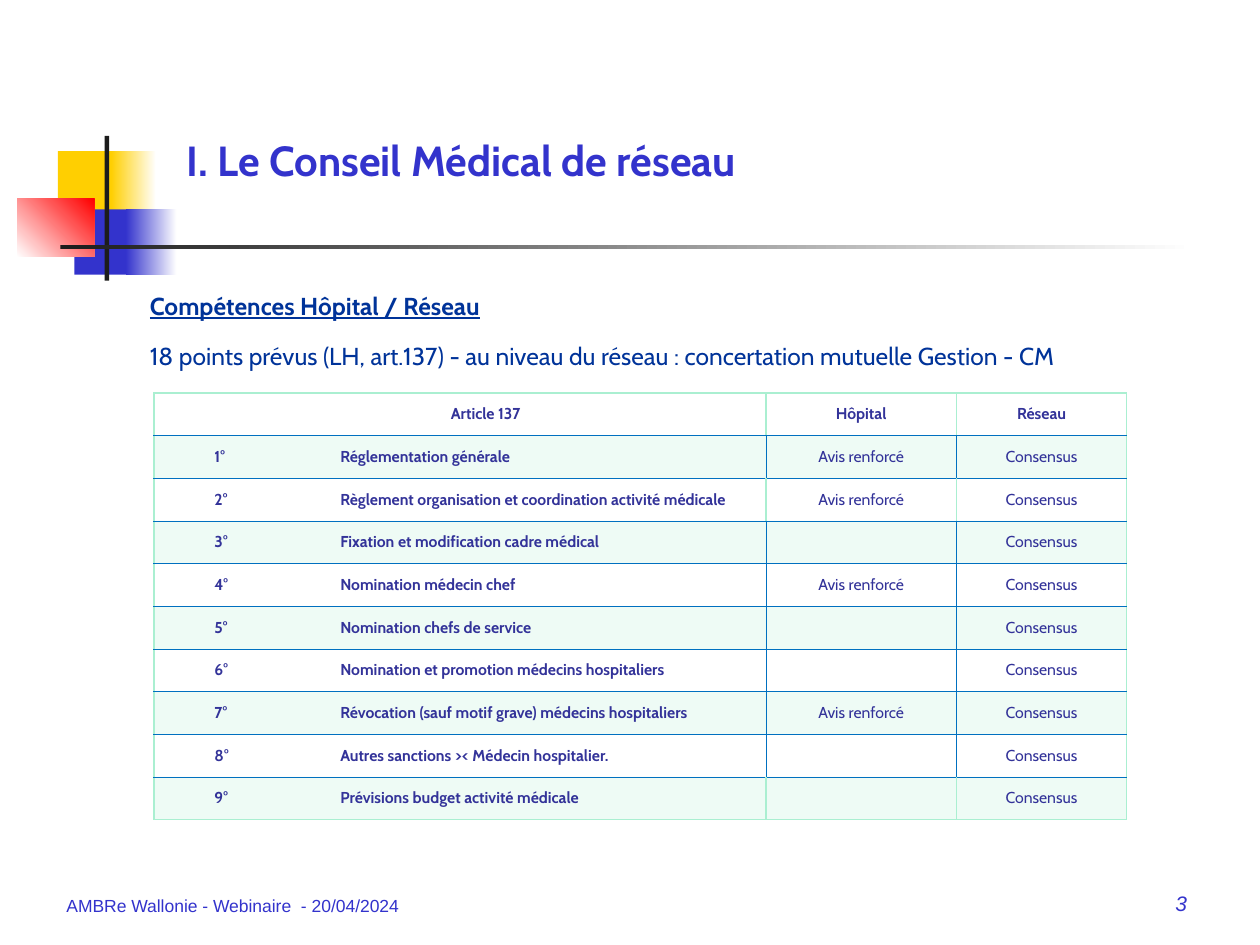
from dataclasses import dataclass
from typing import Optional

import pptx
import pptx.dml.color
import pptx.enum.shapes
import pptx.enum.text
import pptx.oxml
import pptx.oxml.ns
import pptx.util
from pptx.util import Cm

ALIGN = pptx.enum.text.PP_ALIGN
ANCHOR = pptx.enum.text.MSO_ANCHOR


@dataclass(frozen=True)
class Theme:
    blue: str = "3333CC"
    yellow: str = "FFCF01"
    red: str = "FF0000"
    black: str = "1C1C1C"
    white: str = "FFFFFF"
    body: str = "003399"
    cell: str = "333399"
    mint: str = "AAEFD1"
    rule: str = "0070C0"
    font: str = "Cabin"
    footer_font: str = "Arial"
    title_size: float = 24
    body_size: float = 14
    number_size: float = 12
    footer_size: float = 10
    cell_size: float = 9


THEME = Theme()


@dataclass(frozen=True)
class Block:
    """A rectangle in centimetres; with an end colour it fades."""
    left: float
    top: float
    width: float
    height: float
    color: str
    end_color: Optional[str] = None
    angle: float = 0


@dataclass(frozen=True)
class Line:
    text: str
    size: float
    color: str
    font: str = THEME.font
    bold: bool = False
    italic: bool = False
    underline: bool = False
    align: ALIGN = ALIGN.LEFT
    space_before: float = 0
    space_after: float = 0


@dataclass(frozen=True)
class Border:
    color: str
    width: float


@dataclass(frozen=True)
class Article:
    name: str
    hospital: str = ""
    network: str = "Consensus"


BLOCKS = [
    Block(1.17, 3.05, 1.22, 1.32, THEME.yellow),
    Block(2.24, 3.05, 0.91, 1.32, THEME.yellow, THEME.white),
    Block(1.5, 4.22, 1.17, 1.32, THEME.blue),
    Block(2.54, 4.22, 1.02, 1.32, THEME.blue, THEME.white),
    Block(0.35, 4.01, 1.55, 1.17, THEME.white, THEME.red, 45),
    Block(2.11, 2.74, 0.09, 2.92, THEME.black),
    Block(1.22, 4.94, 22.86, 0.09, THEME.black, THEME.white),
]

REINFORCED = "Avis renforcé"
ARTICLES = [
    Article("Réglementation générale", REINFORCED),
    Article("Règlement organisation et coordination activité médicale", REINFORCED),
    Article("Fixation et modification cadre médical"),
    Article("Nomination médecin chef", REINFORCED),
    Article("Nomination chefs de service"),
    Article("Nomination et promotion médecins hospitaliers"),
    Article("Révocation (sauf motif grave) médecins hospitaliers", REINFORCED),
    Article("Autres sanctions >< Médecin hospitalier."),
    Article("Prévisions budget activité médicale"),
]
HEADERS = ("Article 137", "Hôpital", "Réseau")
COLUMN_WIDTHS = (12.34, 3.84, 3.43)
ROW_HEIGHT = 0.86
MINT_DIVIDER_ROWS = (0, 2, 9)
SHADED_ROWS = (1, 3, 5, 7, 9)

MINT = Border(THEME.mint, 1)
HEADER_RULE = Border(THEME.rule, 1)
THIN_RULE = Border(THEME.rule, 0.25)


def rgb(color: str) -> pptx.dml.color.RGBColor:
    return pptx.dml.color.RGBColor.from_string(color)


def add_block(slide, block: Block) -> None:
    shape = slide.shapes.add_shape(
        pptx.enum.shapes.MSO_SHAPE.RECTANGLE,
        Cm(block.left), Cm(block.top), Cm(block.width), Cm(block.height))
    shape.shadow.inherit = False
    shape.line.fill.background()
    if block.end_color is None:
        shape.fill.solid()
        shape.fill.fore_color.rgb = rgb(block.color)
        return
    shape.fill.gradient()
    shape.fill.gradient_angle = block.angle
    for stop, color in zip(shape.fill.gradient_stops, (block.color, block.end_color)):
        stop.color.rgb = rgb(color)


def write_line(paragraph, line: Line) -> None:
    paragraph.text = line.text
    paragraph.alignment = line.align
    paragraph.space_before = pptx.util.Pt(line.space_before)
    paragraph.space_after = pptx.util.Pt(line.space_after)
    font = paragraph.font
    font.name, font.size = line.font, pptx.util.Pt(line.size)
    font.bold, font.italic, font.underline = line.bold, line.italic, line.underline
    font.color.rgb = rgb(line.color)


def add_text(slide, left: float, top: float, width: float, height: float,
             lines: list[Line], anchor: ANCHOR = ANCHOR.BOTTOM) -> None:
    shape = slide.shapes.add_textbox(Cm(left), Cm(top), Cm(width), Cm(height))
    frame = shape.text_frame
    frame.word_wrap = True
    frame.vertical_anchor = anchor
    for index, line in enumerate(lines):
        write_line(frame.add_paragraph() if index else frame.paragraphs[0], line)


def set_borders(cell, borders: dict[str, Border]) -> None:
    """Add the L, R, T and B borders, in that order, ahead of the fill."""
    properties = cell._tc.get_or_add_tcPr()
    for index, (side, border) in enumerate(borders.items()):
        properties.insert(index, pptx.oxml.parse_xml(
            f'<a:ln{side} {pptx.oxml.ns.nsdecls("a")} w="{pptx.util.Pt(border.width)}">'
            f'<a:solidFill><a:srgbClr val="{border.color}"/></a:solidFill></a:ln{side}>'))


def shade(cell) -> None:
    cell.fill.solid()
    cell.fill.fore_color.rgb = rgb(THEME.mint)
    color = cell._tc.tcPr.find(".//" + pptx.oxml.ns.qn("a:srgbClr"))
    color.append(pptx.oxml.parse_xml(
        f'<a:alpha {pptx.oxml.ns.nsdecls("a")} val="20000"/>'))


def horizontal_border(edge: int, row_count: int) -> Border:
    if edge in (0, row_count):
        return MINT
    return HEADER_RULE if edge == 1 else THIN_RULE


def vertical_border(edge: int, row: int) -> Border:
    outside = edge in (0, len(COLUMN_WIDTHS))
    return MINT if outside or row in MINT_DIVIDER_ROWS else THIN_RULE


def add_articles_table(slide, left: float, top: float) -> None:
    rows = [HEADERS] + [(f"{number}°\t{article.name}", article.hospital, article.network)
                        for number, article in enumerate(ARTICLES, start=1)]
    table = slide.shapes.add_table(
        len(rows), len(HEADERS), Cm(left), Cm(top),
        Cm(sum(COLUMN_WIDTHS)), Cm(ROW_HEIGHT * len(rows))).table
    table.first_row = table.horz_banding = False
    for column, width in zip(table.columns, COLUMN_WIDTHS):
        column.width = Cm(width)
    for row, texts in enumerate(rows):
        table.rows[row].height = Cm(ROW_HEIGHT)
        for column, text in enumerate(texts):
            cell = table.cell(row, column)
            cell.margin_left = cell.margin_right = Cm(0.18)
            cell.margin_top = cell.margin_bottom = 0
            cell.vertical_anchor = ANCHOR.MIDDLE
            named = row > 0 and column == 0
            paragraph = cell.text_frame.paragraphs[0]
            write_line(paragraph, Line(
                text, THEME.cell_size, THEME.cell, bold=row == 0 or column == 0,
                align=ALIGN.JUSTIFY if named else ALIGN.CENTER,
                space_before=3, space_after=3))
            if column == 0:
                properties = paragraph._p.get_or_add_pPr()
                properties.set("marL", str(Cm(1.04)))
                properties.set("indent", "0")
                properties.set("defTabSz", str(Cm(2.54)))
            if row in SHADED_ROWS:
                shade(cell)
            else:
                cell.fill.background()
            set_borders(cell, {
                "L": vertical_border(column, row),
                "R": vertical_border(column + 1, row),
                "T": horizontal_border(row, len(rows)),
                "B": horizontal_border(row + 1, len(rows))})


def main() -> None:
    presentation = pptx.Presentation()
    presentation.slide_width, presentation.slide_height = Cm(25.4), Cm(19.05)
    slide = presentation.slides.add_slide(presentation.slide_layouts[6])
    for block in BLOCKS:
        add_block(slide, block)
    add_text(slide, 1.09, 17.32, 7.9, 1.27, [
        Line("AMBRe Wallonie - Webinaire  - 20/04/2024", THEME.footer_size, THEME.blue,
             THEME.footer_font)])
    add_text(slide, 18.9, 17.32, 5.28, 1.27, [
        Line("3", THEME.number_size, THEME.blue, THEME.footer_font, italic=True,
             align=ALIGN.RIGHT)])
    add_text(slide, 3.51, 1.75, 20.37, 2.11, [
        Line("I. Le Conseil Médical de réseau", THEME.title_size, THEME.blue, bold=True)])
    add_text(slide, 2.77, 5.74, 21.84, 1.88, [
        Line("Compétences Hôpital / Réseau", THEME.body_size, THEME.body,
             bold=True, underline=True, space_after=12),
        Line("18 points prévus (LH, art.137) - au niveau du réseau : "
             "concertation mutuelle Gestion - CM", THEME.body_size, THEME.body,
             space_after=10)], ANCHOR.TOP)
    add_articles_table(slide, 3.1, 7.92)
    presentation.save("out.pptx")


if __name__ == "__main__":
    main()
